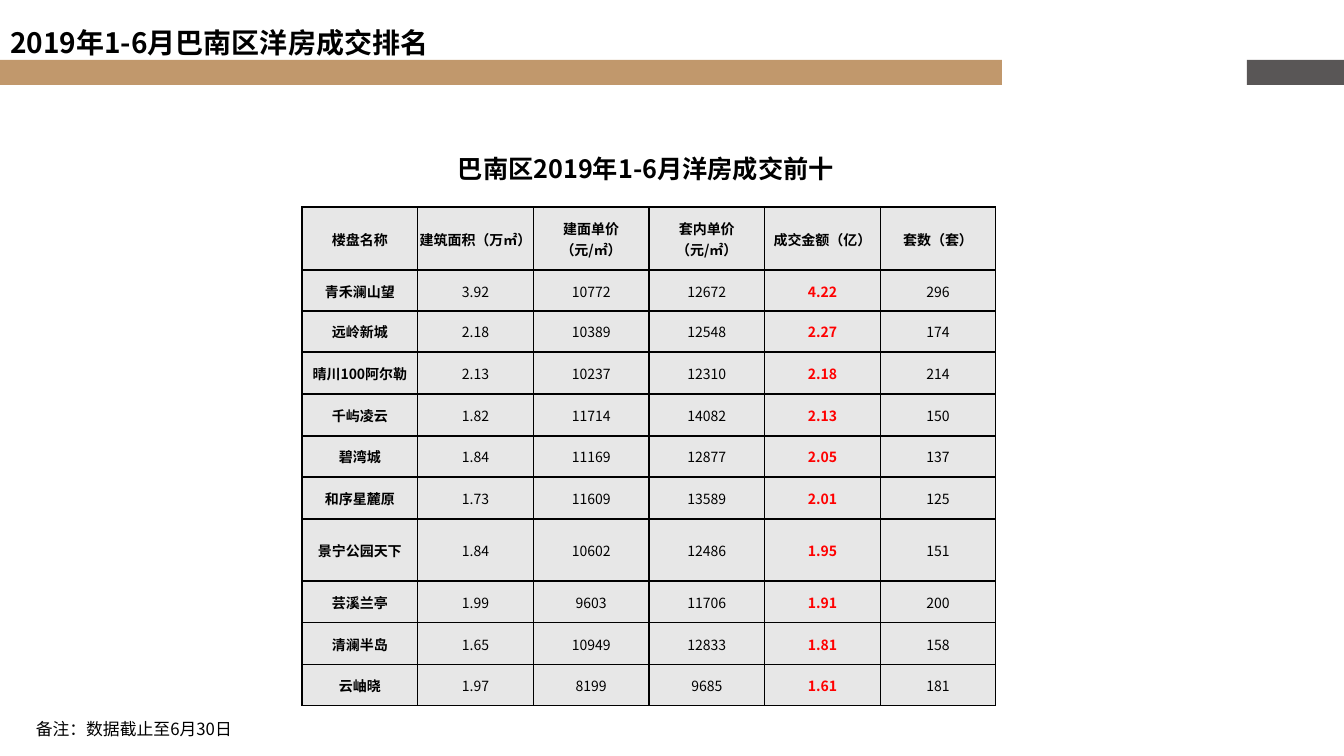
from dataclasses import dataclass

from lxml import etree
from pptx import Presentation
from pptx.dml.color import RGBColor
from pptx.enum.shapes import MSO_SHAPE
from pptx.enum.text import MSO_ANCHOR, MSO_AUTO_SIZE, PP_ALIGN
from pptx.oxml.ns import qn
from pptx.util import Pt

RECTANGLE = MSO_SHAPE.RECTANGLE
TOP, MIDDLE = MSO_ANCHOR.TOP, MSO_ANCHOR.MIDDLE
LEFT, CENTER = PP_ALIGN.LEFT, PP_ALIGN.CENTER
GROW, FIXED = MSO_AUTO_SIZE.SHAPE_TO_FIT_TEXT, MSO_AUTO_SIZE.NONE
TITLE_ONLY = 5
PX_PER_INCH = 100.8


@dataclass(frozen=True)
class Theme:
    font: str = "Noto Sans CJK SC"
    ink: str = "000000"
    highlight: str = "FF0000"
    tan: str = "C1986C"
    gray: str = "595656"
    cell: str = "E7E7E7"
    title_size: int = 20
    heading_size: int = 18
    note_size: int = 12
    table_size: int = 10
    border_width: int = 1


HEADERS = ["楼盘名称", "建筑面积（万㎡）", "建面单价（元/㎡）",
           "套内单价（元/㎡）", "成交金额（亿）", "套数（套）"]
SALES = [
    ["青禾澜山望", "3.92", "10772", "12672", "4.22", "296"],
    ["远岭新城", "2.18", "10389", "12548", "2.27", "174"],
    ["晴川100阿尔勒", "2.13", "10237", "12310", "2.18", "214"],
    ["千屿凌云", "1.82", "11714", "14082", "2.13", "150"],
    ["碧湾城", "1.84", "11169", "12877", "2.05", "137"],
    ["和序星麓原", "1.73", "11609", "13589", "2.01", "125"],
    ["景宁公园天下", "1.84", "10602", "12486", "1.95", "151"],
    ["芸溪兰亭", "1.99", "9603", "11706", "1.91", "200"],
    ["清澜半岛", "1.65", "10949", "12833", "1.81", "158"],
    ["云岫晓", "1.97", "8199", "9685", "1.61", "181"],
]
ROW_HEIGHTS = [63, 41, 41, 42, 42, 41, 42, 62, 42, 42, 41]
NAME_COLUMN, AMOUNT_COLUMN = 0, 4


def px(length):
    return round(length * 914400 / PX_PER_INCH)


class SlideBuilder:
    def __init__(self, page, theme):
        self.page = page
        self.theme = theme

    def set_text(self, frame, text, size, bold=False, color=None, align=LEFT):
        para = frame.paragraphs[0]
        para.text = text
        para.alignment = align
        font = para.font
        font.size, font.bold, font.name = Pt(size), bold, self.theme.font
        font.color.rgb = RGBColor.from_string(color or self.theme.ink)
        properties = para._p.pPr.find(qn("a:defRPr"))
        etree.SubElement(properties, qn("a:ea"), typeface=self.theme.font)

    def bar(self, left, top, width, height, color):
        bar = self.page.shapes.add_shape(
            RECTANGLE, px(left), px(top), px(width), px(height))
        bar.shadow.inherit = False
        bar.fill.solid()
        bar.fill.fore_color.rgb = RGBColor.from_string(color)
        bar.line.fill.background()

    def title(self, left, top, width, height, text):
        box = self.page.shapes.title
        box.left, box.top = px(left), px(top)
        box.width, box.height = px(width), px(height)
        frame = box.text_frame
        frame.vertical_anchor, frame.auto_size = TOP, GROW
        self.set_text(frame, text, self.theme.title_size, bold=True)

    def label(self, left, top, width, height, text, size, bold=False):
        box = self.page.shapes.add_textbox(
            px(left), px(top), px(width), px(height))
        frame = box.text_frame
        frame.word_wrap = True
        frame.vertical_anchor, frame.auto_size = MIDDLE, FIXED
        self.set_text(frame, text, size, bold)

    def border(self, cell):
        properties = cell._tc.get_or_add_tcPr()
        for side in ("a:lnL", "a:lnR", "a:lnT", "a:lnB"):
            line = etree.SubElement(
                properties, qn(side), w=str(Pt(self.theme.border_width)))
            fill = etree.SubElement(line, qn("a:solidFill"))
            etree.SubElement(fill, qn("a:srgbClr"), val=self.theme.ink)

    def table(self, left, top, width, row_heights, rows):
        table = self.page.shapes.add_table(
            len(rows), len(rows[0]), px(left), px(top),
            px(width), px(sum(row_heights))).table
        table.first_row = table.horz_banding = False
        for row, height in zip(table.rows, row_heights):
            row.height = px(height)
        for row_index, values in enumerate(rows):
            for column, value in enumerate(values):
                cell = table.cell(row_index, column)
                cell.margin_left = cell.margin_right = cell.margin_top = px(1)
                cell.margin_bottom = 0
                cell.vertical_anchor = MIDDLE
                self.border(cell)
                cell.fill.solid()
                cell.fill.fore_color.rgb = RGBColor.from_string(self.theme.cell)
                is_header = row_index == 0
                is_amount = column == AMOUNT_COLUMN and not is_header
                self.set_text(
                    cell.text_frame, value, self.theme.table_size,
                    bold=is_header or is_amount or column == NAME_COLUMN,
                    color=self.theme.highlight if is_amount else None,
                    align=CENTER)


def main():
    deck = Presentation()
    deck.slide_width, deck.slide_height = px(1344), px(756)
    page = deck.slides.add_slide(deck.slide_layouts[TITLE_ONLY])
    theme = Theme()
    builder = SlideBuilder(page, theme)
    builder.bar(0, 60, 1002, 25, theme.tan)
    builder.bar(1247, 60, 97, 25, theme.gray)
    builder.title(0, 20, 922, 44, "2019年1-6月巴南区洋房成交排名")
    builder.table(302, 207, 694, ROW_HEIGHTS, [HEADERS] + SALES)
    builder.label(448, 140, 519, 56, "巴南区2019年1-6月洋房成交前十",
                  theme.heading_size, bold=True)
    builder.label(26, 701, 294, 55, "备注：数据截止至6月30日", theme.note_size)
    deck.save("out.pptx")


if __name__ == "__main__":
    main()
